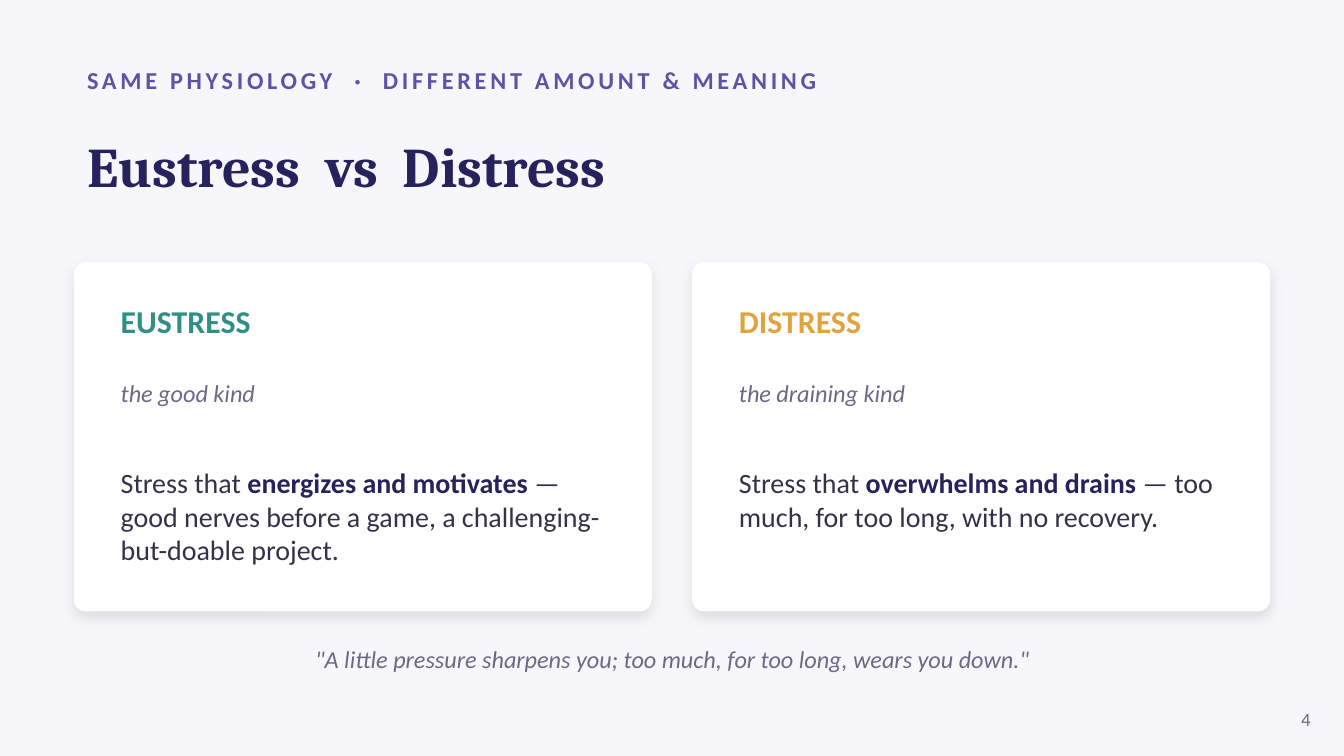
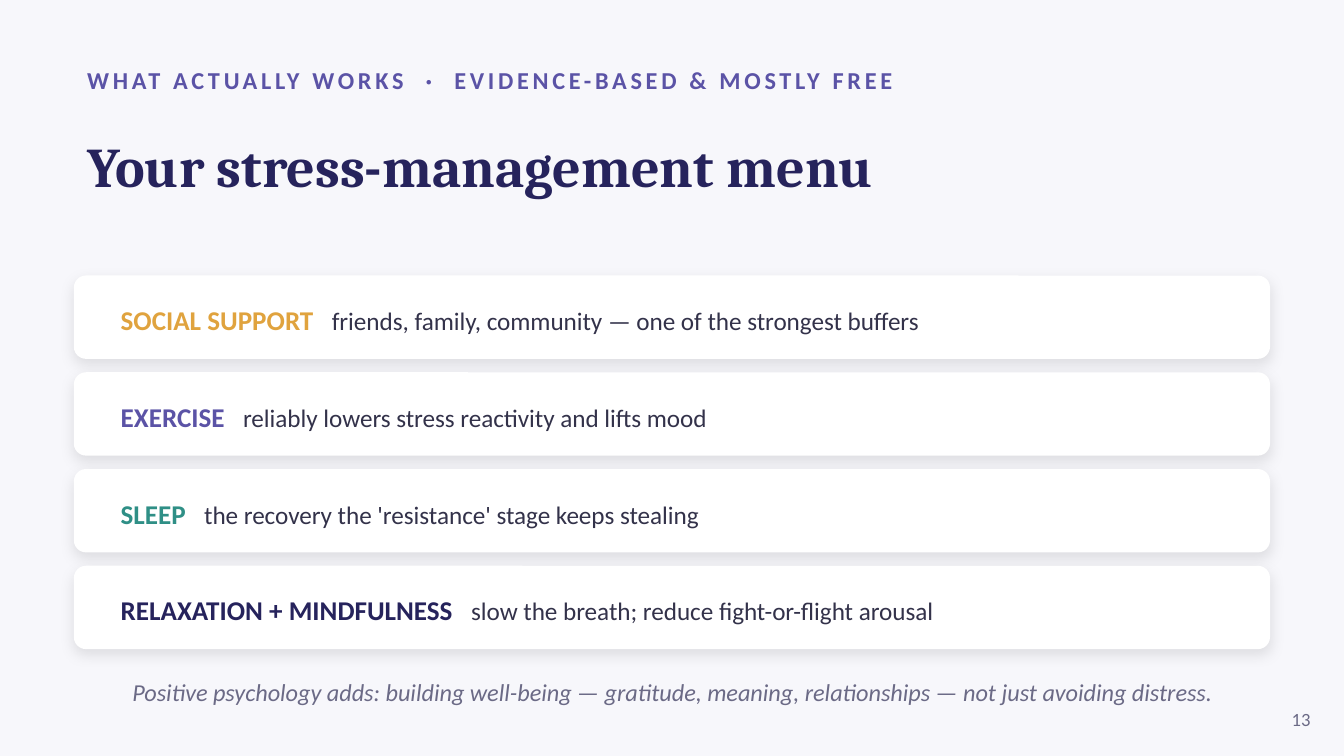
from lxml import etree
from pptx import Presentation
from pptx import util as u
from pptx.dml.color import RGBColor
from pptx.enum import shapes, text
from pptx.oxml import ns

COLORS = {
    "page": "F7F7FB", "card": "FFFFFF", "shadow": "000000", "navy": "26235C",
    "violet": "5B53A6", "teal": "2F8F86", "amber": "E0A33E", "body": "33324A",
    "muted": "6B6A86",
}
MARGIN = 0.55
CONTENT_WIDTH = 8.9
CARD_INSET = 0.25
CARD_RADIUS = 0.09

EYEBROW = {"size": 13, "color": "violet", "bold": True, "tracking": 2}
TITLE = {"name": "Cambria", "size": 30, "color": "navy", "bold": True}
NOTE = {"size": 13, "color": "muted", "italic": True}
NUMBER = {"size": 10, "color": "muted"}
BODY = {"size": 15, "color": "body"}
STRONG = {"size": 15, "color": "navy", "bold": True}
DETAIL = {"size": 13.5, "color": "body"}
LABEL_GAP = {"size": 14.5, "tracking": 6.55}


def rgb(name):
    """Return the named palette colour."""
    return RGBColor.from_string(COLORS[name])


def add_spans(para, spans):
    """Add (words, style) spans to a paragraph."""
    for words, style in spans:
        span = para.add_run()
        span.text = words
        values = {"name": "Calibri", "bold": False, "italic": False, **style}
        tracking = values.pop("tracking", None)
        color = values.pop("color", "body")
        values["size"] = u.Pt(values["size"])
        for key, value in values.items():
            setattr(span.font, key, value)
        span.font.color.rgb = rgb(color)
        if tracking:
            span.font._element.set("spc", str(round(tracking * 100)))


def fill_frame(frame, paragraphs, anchor="MIDDLE", align="LEFT"):
    """Write (space before, spans) paragraphs into a text frame."""
    settings = {
        "word_wrap": True,
        "auto_size": text.MSO_AUTO_SIZE.NONE,
        "vertical_anchor": text.MSO_ANCHOR[anchor],
    }
    for key, value in settings.items():
        setattr(frame, key, value)
    for index, (space, spans) in enumerate(paragraphs):
        para = frame.add_paragraph() if index else frame.paragraphs[0]
        para.alignment = text.PP_ALIGN[align]
        para.space_before = u.Pt(space)
        add_spans(para, spans)


def add_text(slide, area, paragraphs, **layout):
    """Add a wrapped text box at left, top, width, height."""
    box = slide.shapes.add_textbox(*map(u.Inches, area))
    fill_frame(box.text_frame, paragraphs, **layout)


def add_line(slide, area, words, style, **layout):
    """Add a text box holding a single styled span."""
    add_text(slide, area, [(0, [(words, style)])], **layout)


def add_card(slide, left, top, width, height):
    """Add a white rounded card with a soft shadow below it."""
    card = slide.shapes.add_shape(
        shapes.MSO_SHAPE.ROUNDED_RECTANGLE,
        *map(u.Inches, (left, top, width, height)))
    card.adjustments[0] = CARD_RADIUS / min(width, height)
    card.fill.solid()
    card.fill.fore_color.rgb = rgb("card")
    card.line.fill.background()
    card.shadow.inherit = False
    effects = card._element.spPr.find(ns.qn("a:effectLst"))
    shadow = etree.SubElement(
        effects, ns.qn("a:outerShdw"), blurRad=str(u.Pt(7)), dist=str(u.Pt(3)),
        dir="5400000", algn="bl", rotWithShape="0")
    tint = etree.SubElement(shadow, ns.qn("a:srgbClr"), val=COLORS["shadow"])
    etree.SubElement(tint, ns.qn("a:alpha"), val="10000")


def add_page(deck, eyebrow, title, note, note_top, number):
    """Add a slide with its eyebrow, title, closing note and number."""
    slide = deck.slides.add_slide(deck.slide_layouts[5])
    heading = slide.shapes.title
    area = (MARGIN, 0.78, CONTENT_WIDTH, 0.9)
    for key, value in zip(("left", "top", "width", "height"), area):
        setattr(heading, key, u.Inches(value))
    fill_frame(heading.text_frame, [(0, [(title, TITLE)])])
    add_line(slide, (MARGIN, 0.42, 9, 0.35), eyebrow, EYEBROW)
    add_line(slide, (MARGIN, note_top, CONTENT_WIDTH, 0.4), note, NOTE,
             align="CENTER")
    add_line(slide, (9.35, 5.2, 0.5, 0.3), number, NUMBER, align="RIGHT")
    return slide


def add_stress_kind(slide, left, name, color, kind, strong, rest):
    """Add one comparison card with heading, subtitle and description."""
    top, width, height = 1.95, 4.3, 2.6
    add_card(slide, left, top, width, height)
    paragraphs = [
        (0, [(name, {"size": 17, "color": color, "bold": True})]),
        (20.3, [(kind, NOTE)]),
        (31.2, [("Stress that ", BODY), (strong, STRONG), (rest, BODY)]),
    ]
    area = (left + CARD_INSET, top + CARD_INSET, width - 2 * CARD_INSET, 2.2)
    add_text(slide, area, paragraphs, anchor="TOP")


def add_menu_row(slide, top, label, color, detail):
    """Add one full-width menu card with a coloured label."""
    add_card(slide, MARGIN, top, CONTENT_WIDTH, 0.62)
    spans = [
        (label, {"size": 14.5, "color": color, "bold": True}),
        (" ", LABEL_GAP),
        (detail, DETAIL),
    ]
    area = (MARGIN + CARD_INSET, top + 0.13,
            CONTENT_WIDTH - 2 * CARD_INSET, 0.4)
    add_text(slide, area, [(0, spans)])


def build_comparison(deck):
    """Build the slide that compares the two kinds of stress."""
    slide = add_page(
        deck, "SAME PHYSIOLOGY  ·  DIFFERENT AMOUNT & MEANING",
        "Eustress  vs  Distress",
        '"A little pressure sharpens you; too much, for too long, '
        'wears you down."', 4.7, "4")
    kinds = [
        ("EUSTRESS", "teal", "the good kind", "energizes and motivates",
         " — good nerves before a game, a challenging-but-doable project."),
        ("DISTRESS", "amber", "the draining kind", "overwhelms and drains",
         " — too much, for too long, with no recovery."),
    ]
    for column, kind in enumerate(kinds):
        add_stress_kind(slide, MARGIN + column * 4.6, *kind)


def build_menu(deck):
    """Build the slide that lists ways to manage stress."""
    slide = add_page(
        deck, "WHAT ACTUALLY WORKS  ·  EVIDENCE-BASED & MOSTLY FREE",
        "Your stress-management menu",
        "Positive psychology adds: building well-being — gratitude, meaning, "
        "relationships — not just avoiding distress.", 4.95, "13")
    rows = [
        ("SOCIAL SUPPORT", "amber",
         "friends, family, community — one of the strongest buffers"),
        ("EXERCISE", "violet",
         "reliably lowers stress reactivity and lifts mood"),
        ("SLEEP", "teal",
         "the recovery the 'resistance' stage keeps stealing"),
        ("RELAXATION + MINDFULNESS", "navy",
         "slow the breath; reduce fight-or-flight arousal"),
    ]
    for index, row in enumerate(rows):
        add_menu_row(slide, 2.05 + index * 0.72, *row)


def main():
    """Build and save the deck."""
    deck = Presentation()
    deck.slide_width = u.Inches(10)
    deck.slide_height = deck.slide_width * 9 // 16
    backdrop = deck.slide_master.background.fill
    backdrop.solid()
    backdrop.fore_color.rgb = rgb("page")
    build_comparison(deck)
    build_menu(deck)
    deck.save("out.pptx")


if __name__ == "__main__":
    main()
